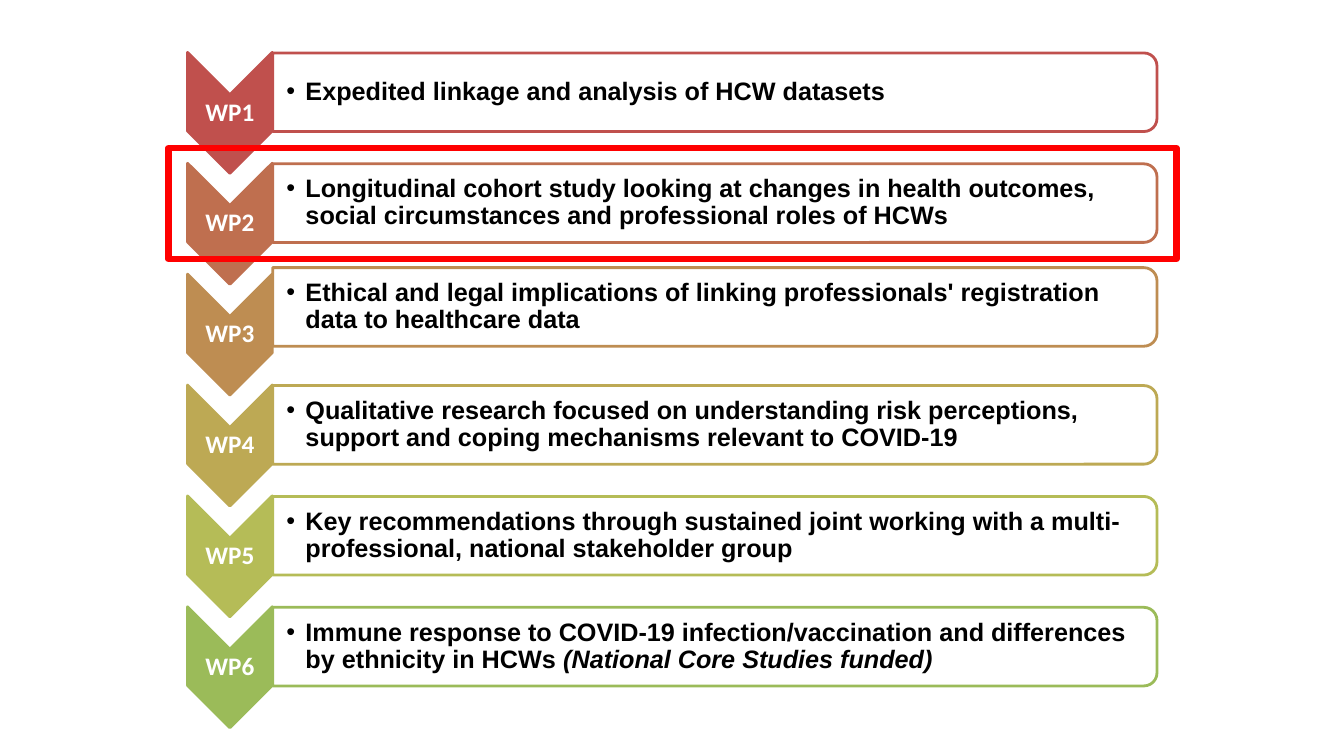
"""Builds a slide listing six work packages, with the second one framed."""
from lxml.etree import SubElement
from pptx import Presentation
from pptx.dml.color import RGBColor
from pptx.enum.shapes import MSO_SHAPE
from pptx.enum.text import MSO_ANCHOR, PP_ALIGN
from pptx.oxml.ns import qn
from pptx.util import Pt

PX = 9144
PITCH = 110
COLORS = {
    "WP1": "C0504D",
    "WP2": "BF6F4F",
    "WP3": "BE8D52",
    "WP4": "BDA954",
    "WP5": "B5BC57",
    "WP6": "9BBB59",
    "paper": "FFFFFF",
    "ink": "000000",
    "frame": "FF0000",
}
TASKS = [
    ("WP1", 0, ["Expedited linkage and analysis of HCW datasets"]),
    ("WP2", 0, ["Longitudinal cohort study looking at changes in health outcomes, "
                "social circumstances and professional roles of HCWs"]),
    ("WP3", -7, ["Ethical and legal implications of linking professionals' "
                 "registration data to healthcare data"]),
    ("WP4", 0, ["Qualitative research focused on understanding risk perceptions, "
                "support and coping mechanisms relevant to COVID-19"]),
    ("WP5", 0, ["Key recommendations through sustained joint working with a "
                "multi-professional, national stakeholder group"]),
    ("WP6", 0, ["Immune response to COVID-19 infection/vaccination and differences "
                "by ethnicity in HCWs ", "(National Core Studies funded)"]),
]

deck = Presentation()
deck.slide_width, deck.slide_height = 1333 * PX, 750 * PX
slide = deck.slides.add_slide(deck.slide_layouts[6])


def add_form(kind, place, line, width, fill=None, turn=0):
    form = slide.shapes.add_shape(kind, *[n * PX for n in place])
    form.rotation = turn
    form.shadow.inherit = False
    form.line.color.rgb = RGBColor.from_string(COLORS[line])
    form.line.width = Pt(width)
    if fill:
        form.fill.solid()
        form.fill.fore_color.rgb = RGBColor.from_string(COLORS[fill])
    else:
        form.fill.background()
    return form


def add_label(place, runs, face, color, inset, bullet=False):
    frame = slide.shapes.add_textbox(*[n * PX for n in place]).text_frame
    style = {"word_wrap": True, "vertical_anchor": MSO_ANCHOR.MIDDLE,
             "margin_left": inset * PX, "margin_right": PX,
             "margin_top": PX, "margin_bottom": PX}
    for key, value in style.items():
        setattr(frame, key, value)
    para = frame.paragraphs[0]
    para.line_spacing = 0.9
    para.alignment = PP_ALIGN.LEFT if bullet else PP_ALIGN.CENTER
    if bullet:
        props = para._p.get_or_add_pPr()
        props.set("marL", str(19 * PX))
        props.set("indent", str(-19 * PX))
        SubElement(props, qn("a:buFont"), typeface="Arial")
        SubElement(props, qn("a:buChar"), char="•")
    for i, text in enumerate(runs):
        run = para.add_run()
        run.text = text
        font = {"name": face, "size": Pt(18), "bold": True, "italic": i > 0}
        for key, value in font.items():
            setattr(run.font, key, value)
        run.font.color.rgb = RGBColor.from_string(COLORS[color])


for row, (name, shift, runs) in enumerate(TASKS):
    top = row * PITCH
    add_form(MSO_SHAPE.CHEVRON, (168, 70 + top, 120, 84), name, 2, name, 90)
    add_label((186, 94 + top, 84, 36), [name], "Calibri", "paper", 1)
    panel = add_form(MSO_SHAPE.ROUND_2_SAME_RECTANGLE,
                     (670, -347 + top + shift, 78, 877), name, 2, "paper", 90)
    tint = panel.fill._xPr.find(qn("a:solidFill"))[0]
    SubElement(tint, qn("a:alpha"), val="90000")
    add_label((270, 56 + top + shift, 873, 71), runs, "Arial", "ink", 14, True)

add_form(MSO_SHAPE.RECTANGLE, (167, 147, 1000, 110), "frame", 4.5)

deck.save("out.pptx")
